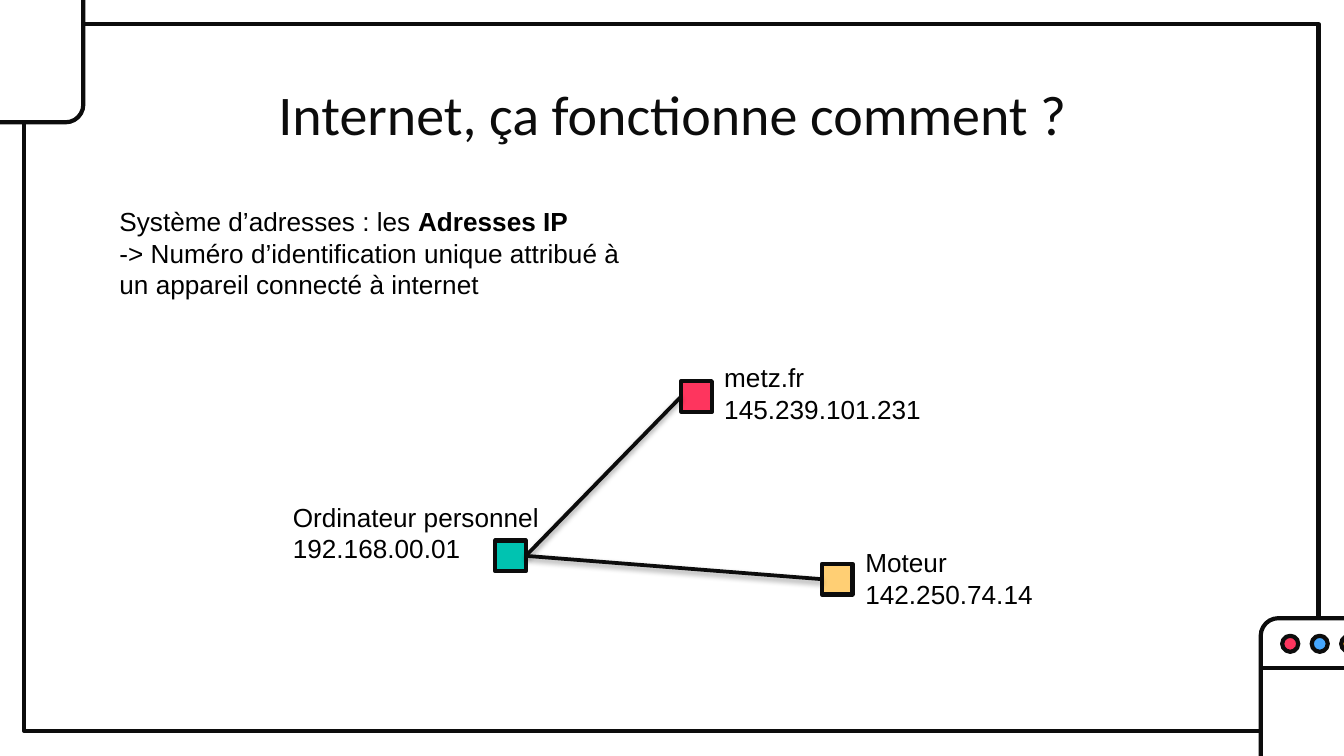
from dataclasses import dataclass

from lxml import etree
from pptx import Presentation
from pptx import util as u
from pptx.dml.color import RGBColor
from pptx.enum import shapes, text
from pptx.oxml import ns

INK = RGBColor(0x0C, 0x0C, 0x0C)
BLACK = RGBColor(0x00, 0x00, 0x00)
WHITE = RGBColor(0xFF, 0xFF, 0xFF)
RED = RGBColor(0xFE, 0x35, 0x5E)
BLUE = RGBColor(0x45, 0xA7, 0xFF)
ORANGE = RGBColor(0xFF, 0xAF, 0x18)
TEAL = RGBColor(0x00, 0xC3, 0xB1)
YELLOW = RGBColor(0xFF, 0xCF, 0x74)

KIND = shapes.MSO_SHAPE
LEFT_SITE, RIGHT_SITE = 1, 3
NODE_SIZE = 16.4
WINDOW_SIZE = (112.3, 137.5)
INSET = 7.2


@dataclass(frozen=True)
class Box:
    x: float
    y: float
    w: float
    h: float

    def emu(self) -> tuple:
        return tuple(u.Pt(v) for v in (self.x, self.y, self.w, self.h))


@dataclass(frozen=True)
class Node:
    x: float
    y: float
    color: RGBColor


@dataclass(frozen=True)
class Label:
    box: Box
    lines: tuple
    inset_y: float = INSET


def add_outlined(s, kind, box: Box, fill: RGBColor | None = None):
    sp = s.shapes.add_shape(kind, *box.emu())
    sp.shadow.inherit = False
    if fill is None:
        sp.fill.background()
    else:
        sp.fill.solid()
        sp.fill.fore_color.rgb = fill
    sp.line.color.rgb = INK
    sp.line.width = u.Pt(2.25)
    return sp


def add_window(s, x: float, y: float) -> None:
    sp = add_outlined(s, KIND.ROUNDED_RECTANGLE, Box(x, y, *WINDOW_SIZE), WHITE)
    sp.adjustments[0] = 0.084


def add_line(s, width: float, x1: float = 0, y1: float = 0, x2: float = 0, y2: float = 0):
    c = s.shapes.add_connector(
        shapes.MSO_CONNECTOR.STRAIGHT, u.Pt(x1), u.Pt(y1), u.Pt(x2), u.Pt(y2)
    )
    c.line.color.rgb = INK
    c.line.width = u.Pt(width)
    effects = etree.SubElement(c._element.spPr, ns.qn("a:effectLst"))
    return c, effects


def add_link(s, start, end) -> None:
    c, effects = add_line(s, 2)
    c.begin_connect(start, RIGHT_SITE)
    c.end_connect(end, LEFT_SITE)
    shadow = etree.SubElement(
        effects,
        ns.qn("a:outerShdw"),
        blurRad=str(u.Pt(3.1)),
        dist=str(u.Pt(1.6)),
        dir="5400000",
        rotWithShape="0",
    )
    color = etree.SubElement(shadow, ns.qn("a:srgbClr"), val=str(BLACK))
    etree.SubElement(color, ns.qn("a:alpha"), val="38000")


def set_insets(tf, inset_y: float) -> None:
    tf.word_wrap = True
    tf.vertical_anchor = text.MSO_ANCHOR.TOP
    tf.margin_left = tf.margin_right = u.Pt(INSET)
    tf.margin_top = tf.margin_bottom = u.Pt(inset_y)


def style_runs(tf, font: str, size: float, color: RGBColor) -> None:
    for p in tf.paragraphs:
        for r in p.runs:
            r.font.name = font
            r.font.size = u.Pt(size)
            r.font.color.rgb = color


def add_label(s, label: Label):
    tf = s.shapes.add_textbox(*label.box.emu()).text_frame
    set_insets(tf, label.inset_y)
    tf.text = "\n".join(label.lines)
    style_runs(tf, "Arial", 14, BLACK)
    return tf


def add_title(s, title: str) -> None:
    sp = s.shapes.title
    sp.left, sp.top, sp.width, sp.height = Box(56.9, 35.3, 607, 45.4).emu()
    tf = sp.text_frame
    tf.text = title
    set_insets(tf, INSET)
    tf.auto_size = text.MSO_AUTO_SIZE.NONE
    tf.paragraphs[0].alignment = text.PP_ALIGN.CENTER
    style_runs(tf, "Calibri", 30, INK)


def add_decor(s) -> None:
    add_outlined(s, KIND.RECTANGLE, Box(13, 13, 693.4, 378.7))
    add_window(s, 675.4, 331.2)
    add_line(s, 2.25, 675.4, 357.8, 787.7, 357.8)
    for i, color in enumerate((RED, BLUE, ORANGE)):
        add_outlined(s, KIND.OVAL, Box(686.9 + 15.8 * i, 340.6, 8.6, 8.6), color)
    add_window(s, -67.7, -72)


def add_node(s, node: Node):
    box = Box(node.x, node.y, NODE_SIZE, NODE_SIZE)
    return add_outlined(s, KIND.RECTANGLE, box, node.color)


NODES = (
    Node(265.3, 289.6, TEAL),
    Node(365, 204.2, RED),
    Node(440.3, 302.1, YELLOW),
)
INTRO = Label(
    Box(56.9, 103, 288.7, 32.4),
    (
        "Système d’adresses : les ",
        "-> Numéro d’identification unique attribué à un appareil connecté à internet",
    ),
)
LABELS = (
    Label(Box(380.9, 186.5, 288.7, 32.4), ("metz.fr", "145.239.101.231")),
    Label(Box(149.8, 261.4, 154.1, 32.4), ("Ordinateur personnel", "192.168.00.01")),
    Label(Box(456.5, 289.4, 108, 41), ("Moteur", "142.250.74.14"), INSET / 2),
)


def main() -> None:
    prs = Presentation()
    prs.slide_width, prs.slide_height = u.Pt(720), u.Pt(405)
    s = prs.slides.add_slide(prs.slide_layouts[5])

    add_decor(s)
    add_title(s, "Internet, ça fonctionne comment ?")
    computer, *servers = [add_node(s, node) for node in NODES]

    tf = add_label(s, INTRO)
    r = tf.paragraphs[0].add_run()
    r.text = "Adresses IP"
    r.font.bold = True
    style_runs(tf, "Arial", 14, BLACK)

    for label in LABELS:
        add_label(s, label)
    for server in servers:
        add_link(s, computer, server)

    prs.save("out.pptx")


if __name__ == "__main__":
    main()
